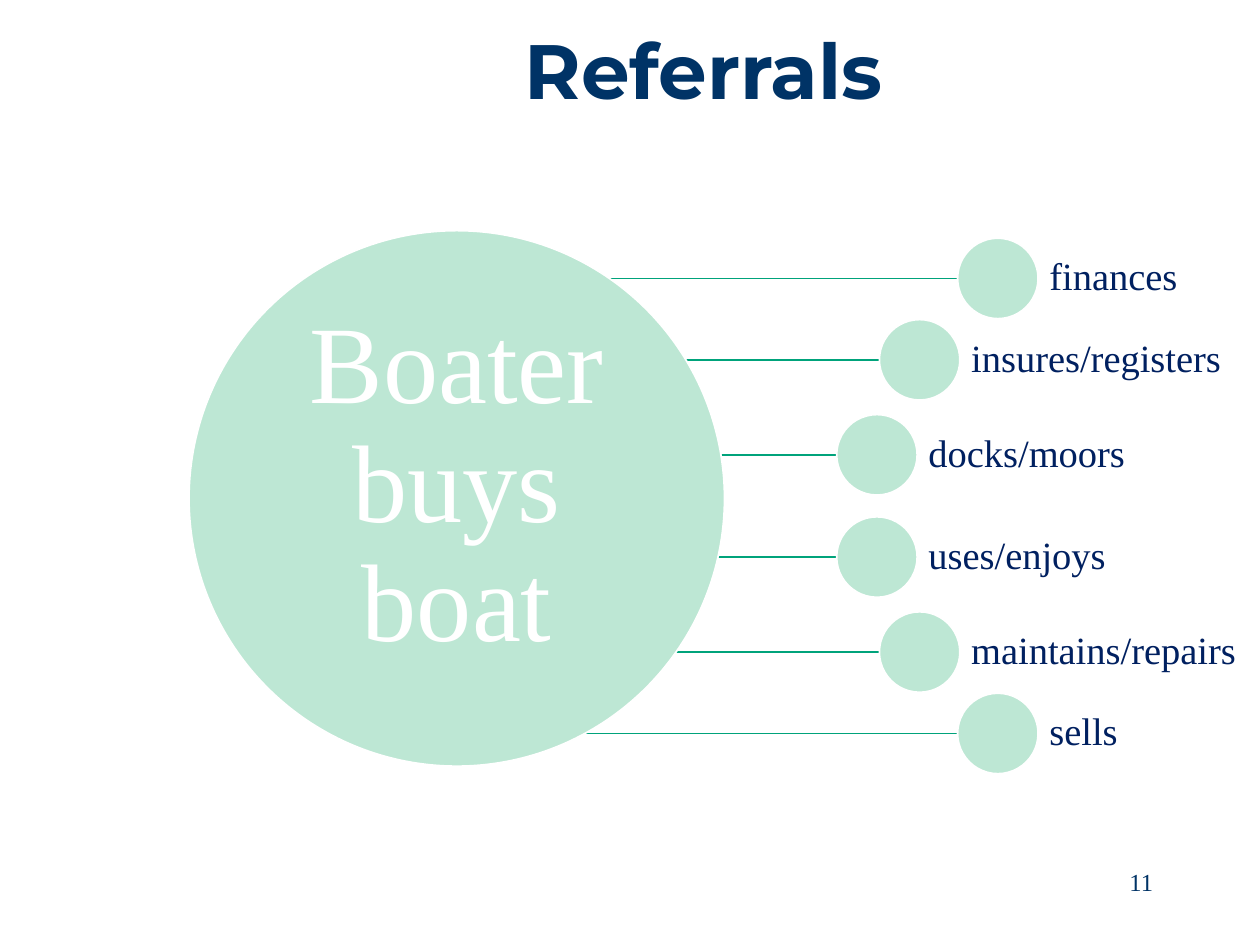
from dataclasses import dataclass

from lxml.etree import SubElement
from pptx import Presentation
from pptx.dml.color import RGBColor
from pptx.enum.shapes import MSO_CONNECTOR, MSO_SHAPE
from pptx.enum.text import MSO_ANCHOR, PP_ALIGN
from pptx.oxml.ns import qn
from pptx.util import Pt


@dataclass(frozen=True)
class Theme:
    navy: RGBColor = RGBColor(0x00, 0x33, 0x66)
    label: RGBColor = RGBColor(0x00, 0x20, 0x60)
    green: RGBColor = RGBColor(0x00, 0xA3, 0x7B)
    mint: RGBColor = RGBColor(0xBD, 0xE7, 0xD4)
    white: RGBColor = RGBColor(0xFF, 0xFF, 0xFF)
    heading_font: str = "Montserrat"
    body_font: str = "Times New Roman"
    title_size: int = 44
    hub_size: int = 63
    label_size: int = 22
    number_size: int = 14


THEME = Theme()

# Hub circle and the axis the satellites mirror about
HUB_X, HUB_Y, HUB_D = 261, 284.8, 306
AXIS_Y, DOT_D = 289.1, 46

# Label, centre x, offset from the axis, label width
REFERRALS = [
    ("finances", 570.2, -130, 87),
    ("insures/registers", 525.5, -83.5, 157),
    ("docks/moors", 501.1, -29.2, 130),
    ("uses/enjoys", 501.1, 29.2, 119),
    ("maintains/repairs", 525.5, 83.5, 166),
    ("sells", 570.2, 130, 56),
]


def set_attrs(obj, values):
    for name, value in values.items():
        setattr(obj, name, value)


def write(sp, text, size, color, font=THEME.body_font, bold=False,
          frame=None, para=None):
    tf = sp.text_frame
    set_attrs(tf, {"word_wrap": True, **(frame or {})})
    p = tf.paragraphs[0]
    set_attrs(p, para or {})
    r = p.add_run()
    r.text = text
    set_attrs(r.font, {"name": font, "size": Pt(size), "bold": bold})
    r.font.color.rgb = color


def add_text(shapes, box, *args, **kwargs):
    sp = shapes.add_textbox(*map(Pt, box))
    write(sp, *args, **kwargs)


def add_circle(shapes, x, y, d):
    sp = shapes.add_shape(MSO_SHAPE.OVAL, Pt(x - d / 2), Pt(y - d / 2), Pt(d), Pt(d))
    sp.shadow.inherit = False
    sp.fill.solid()
    sp.fill.fore_color.rgb = THEME.mint
    sp.line.color.rgb = THEME.white
    sp.line.width = Pt(1)


def add_spoke(shapes, x, y):
    cxn = shapes.add_connector(MSO_CONNECTOR.STRAIGHT, Pt(HUB_X), Pt(y), Pt(x), Pt(y))
    cxn.line.color.rgb = THEME.green
    cxn.line.width = Pt(1)
    SubElement(cxn._element.spPr, qn("a:effectLst"))


def add_title(s, text):
    sp = s.shapes.title
    set_attrs(sp, {"left": Pt(96), "top": Pt(1), "width": Pt(612), "height": Pt(77)})
    write(sp, text, THEME.title_size, THEME.navy, THEME.heading_font, True,
          {"vertical_anchor": MSO_ANCHOR.MIDDLE}, {"alignment": PP_ALIGN.CENTER})


def add_hub(shapes):
    add_circle(shapes, HUB_X, HUB_Y, HUB_D)
    margins = dict.fromkeys(
        ("margin_left", "margin_top", "margin_right", "margin_bottom"), 0)
    add_text(shapes, (163, 163.4, 196, 216.8), "Boater buys boat",
             THEME.hub_size, THEME.white,
             frame={**margins, "vertical_anchor": MSO_ANCHOR.BOTTOM},
             para={"alignment": PP_ALIGN.CENTER, "line_spacing": 0.9})


def add_satellite(shapes, text, x, y, width):
    add_circle(shapes, x, y, DOT_D)
    add_text(shapes, (x + DOT_D / 2, y - DOT_D / 2, width, DOT_D), text,
             THEME.label_size, THEME.label,
             frame={"margin_left": Pt(6.5), "margin_right": Pt(6.5),
                    "margin_top": 0, "margin_bottom": 0, "word_wrap": False,
                    "vertical_anchor": MSO_ANCHOR.MIDDLE},
             para={"alignment": PP_ALIGN.LEFT, "line_spacing": 0.9})


def main():
    prs = Presentation()
    prs.slide_width, prs.slide_height = Pt(720), Pt(540)
    s = prs.slides.add_slide(prs.slide_layouts[5])

    # Title and page number
    add_title(s, "Referrals")
    add_text(s.shapes, (516, 492, 150, 36), "11", THEME.number_size, THEME.navy,
             para={"alignment": PP_ALIGN.RIGHT})

    # Radial diagram: spokes lie behind the circles
    shapes = s.shapes.add_group_shape().shapes
    for _, x, dy, _ in reversed(REFERRALS):
        add_spoke(shapes, x, AXIS_Y + dy)
    add_hub(shapes)
    for text, x, dy, width in REFERRALS:
        add_satellite(shapes, text, x, AXIS_Y + dy, width)

    prs.save("out.pptx")


if __name__ == "__main__":
    main()
